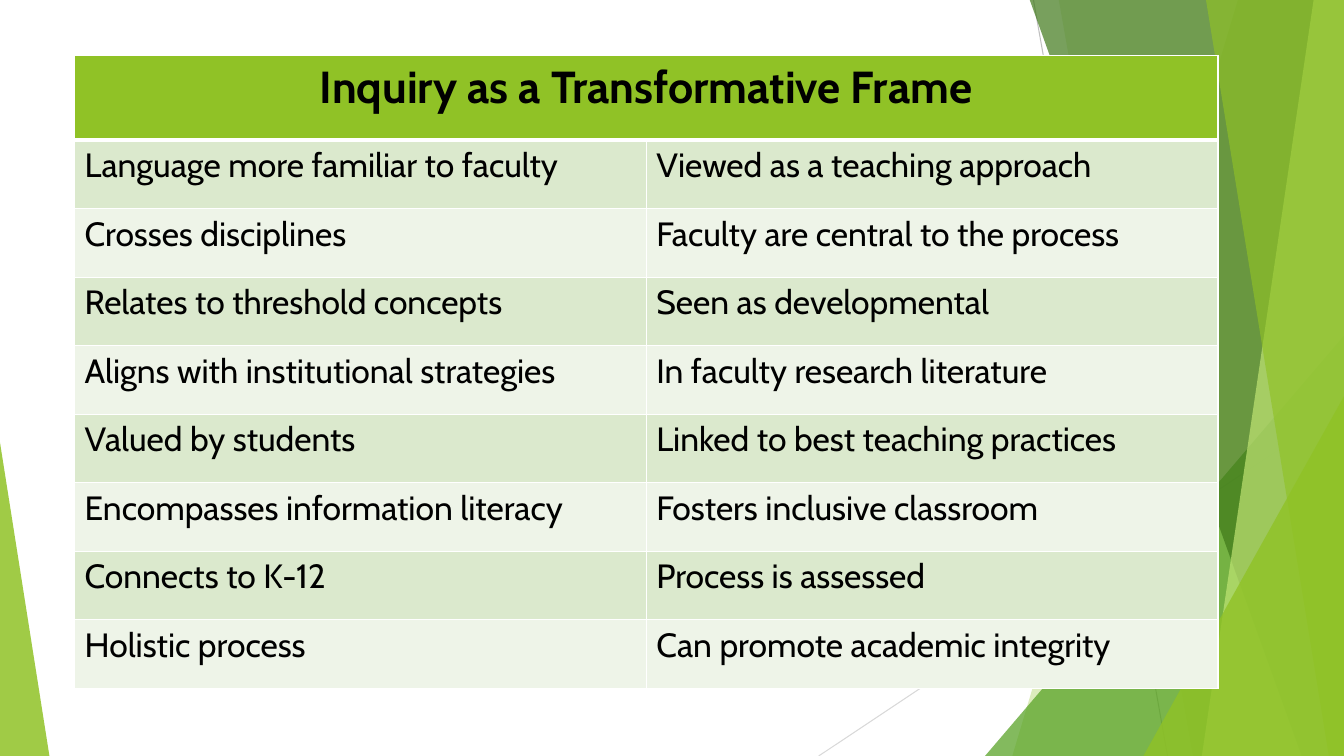
from lxml import etree
from pptx import Presentation
from pptx.dml.color import RGBColor
from pptx.enum import shapes, text
from pptx.oxml import ns
from pptx.util import Inches, Pt

WHITE = RGBColor(0xFF, 0xFF, 0xFF)
BLACK = RGBColor(0x00, 0x00, 0x00)
GREY = RGBColor(0xBF, 0xBF, 0xBF)
LIGHT_GREY = RGBColor(0xD9, 0xD9, 0xD9)
LIME = RGBColor(0x90, 0xC2, 0x26)
PALE_LIME = RGBColor(0xC0, 0xE4, 0x74)
GREEN = RGBColor(0x54, 0xA0, 0x21)
DARK_GREEN = RGBColor(0x3F, 0x78, 0x19)
BAND_DARK = RGBColor(0xDB, 0xE9, 0xCD)
BAND_LIGHT = RGBColor(0xEE, 0xF4, 0xE8)

WIDTH, HEIGHT, TOP = 13.33, 7.5, -0.01

presentation = Presentation()
presentation.slide_width = Inches(WIDTH)
presentation.slide_height = Inches(HEIGHT)
slide = presentation.slides.add_slide(presentation.slide_layouts[6])


def write_cell(cell, words, fill, size=24, bold=False, align=text.PP_ALIGN.LEFT, top=1, bottom=1):
    """Fill a table cell with text and rule it in white; top and bottom are line widths in points."""
    paragraph = cell.text_frame.paragraphs[0]
    paragraph.alignment = align
    run = paragraph.add_run()
    run.text = words
    run.font.name = "Cabin"
    run.font.size = Pt(size)
    run.font.bold = bold
    run.font.color.rgb = BLACK
    properties = cell._tc.get_or_add_tcPr()
    for side, points in (("lnL", 1), ("lnR", 1), ("lnT", top), ("lnB", bottom)):
        border = etree.SubElement(properties, ns.qn(f"a:{side}"), w=str(Pt(points)))
        solid = etree.SubElement(border, ns.qn("a:solidFill"))
        etree.SubElement(solid, ns.qn("a:srgbClr"), val=str(WHITE))
    cell.fill.solid()
    cell.fill.fore_color.rgb = fill


def paint(shape, color, opacity):
    """Give a facet a plain translucent fill; opacity is in percent."""
    shape.shadow.inherit = False
    shape.line.fill.background()
    shape.fill.solid()
    shape.fill.fore_color.rgb = color
    color_element = shape.fill._xPr.find(ns.qn("a:solidFill"))[0]
    etree.SubElement(color_element, ns.qn("a:alpha"), val=str(opacity * 1000))


# Thin lines behind the facets
for x1, y1, x2, y2, color in (
    (10.25, 0, 11.58, HEIGHT, GREY),
    (WIDTH, 4.03, 8.12, HEIGHT, LIGHT_GREY),
):
    line = slide.shapes.add_connector(
        shapes.MSO_CONNECTOR.STRAIGHT, Inches(x1), Inches(y1), Inches(x2), Inches(y2))
    line.line.color.rgb = color
    line.line.width = Pt(0.75)
    etree.SubElement(line._element.spPr, ns.qn("a:effectLst"))

# Facets, back to front: a band has a slanted left edge (top x, bottom x),
# a triangle stands on the bottom edge (left, width, height, apex)
facets = (
    ("band", (12.28, 10.04), LIME, 30),
    ("band", (10.5, 11.83), LIME, 20),
    ("triangle", (9.77, 3.56, 4.17, 1), GREEN, 72),
    ("band", (10.21, 12.91), DARK_GREEN, 70),
    ("band", (13.03, 11.92), PALE_LIME, 70),
    ("band", (11.96, 13.18), LIME, 65),
    ("triangle", (11.34, 1.99, 3.57, 1), LIME, 80),
    ("triangle", (0, 0.49, 3.11, 0), LIME, 85),
)
for kind, geometry, color, opacity in facets:
    if kind == "band":
        top_x, bottom_x = geometry
        builder = slide.shapes.build_freeform(Inches(top_x), Inches(TOP))
        corners = ((WIDTH, TOP), (WIDTH, HEIGHT), (bottom_x, HEIGHT))
        builder.add_line_segments([(Inches(x), Inches(y)) for x, y in corners], close=True)
        facet = builder.convert_to_shape()
    else:
        left, width, height, apex = geometry
        facet = slide.shapes.add_shape(
            shapes.MSO_SHAPE.ISOSCELES_TRIANGLE,
            Inches(left), Inches(HEIGHT - height), Inches(width), Inches(height))
        facet.adjustments[0] = apex
    paint(facet, color, opacity)

# Table
statements = (
    ("Language more familiar to faculty", "Viewed as a teaching approach"),
    ("Crosses disciplines", "Faculty are central to the process"),
    ("Relates to threshold concepts", "Seen as developmental"),
    ("Aligns with institutional strategies", "In faculty research literature"),
    ("Valued by students", "Linked to best teaching practices"),
    ("Encompasses information literacy", "Fosters inclusive classroom"),
    ("Connects to K-12", "Process is assessed"),
    ("Holistic process", "Can promote academic integrity"),
)
table = slide.shapes.add_table(
    len(statements) + 1, 2, Inches(0.74), Inches(0.55), Inches(11.34), Inches(6.28)).table
for row in table.rows:
    row.height = Inches(0.68)
table.rows[0].height = Inches(0.84)

table.cell(0, 0).merge(table.cell(0, 1))
write_cell(table.cell(0, 0), "Inquiry as a Transformative Frame", LIME,
           size=32, bold=True, align=text.PP_ALIGN.CENTER, bottom=3)
for row_number, pair in enumerate(statements, start=1):
    for column_number, statement in enumerate(pair):
        write_cell(table.cell(row_number, column_number), statement,
                   BAND_DARK if row_number % 2 else BAND_LIGHT,
                   top=3 if row_number == 1 else 1)

presentation.save("out.pptx")
